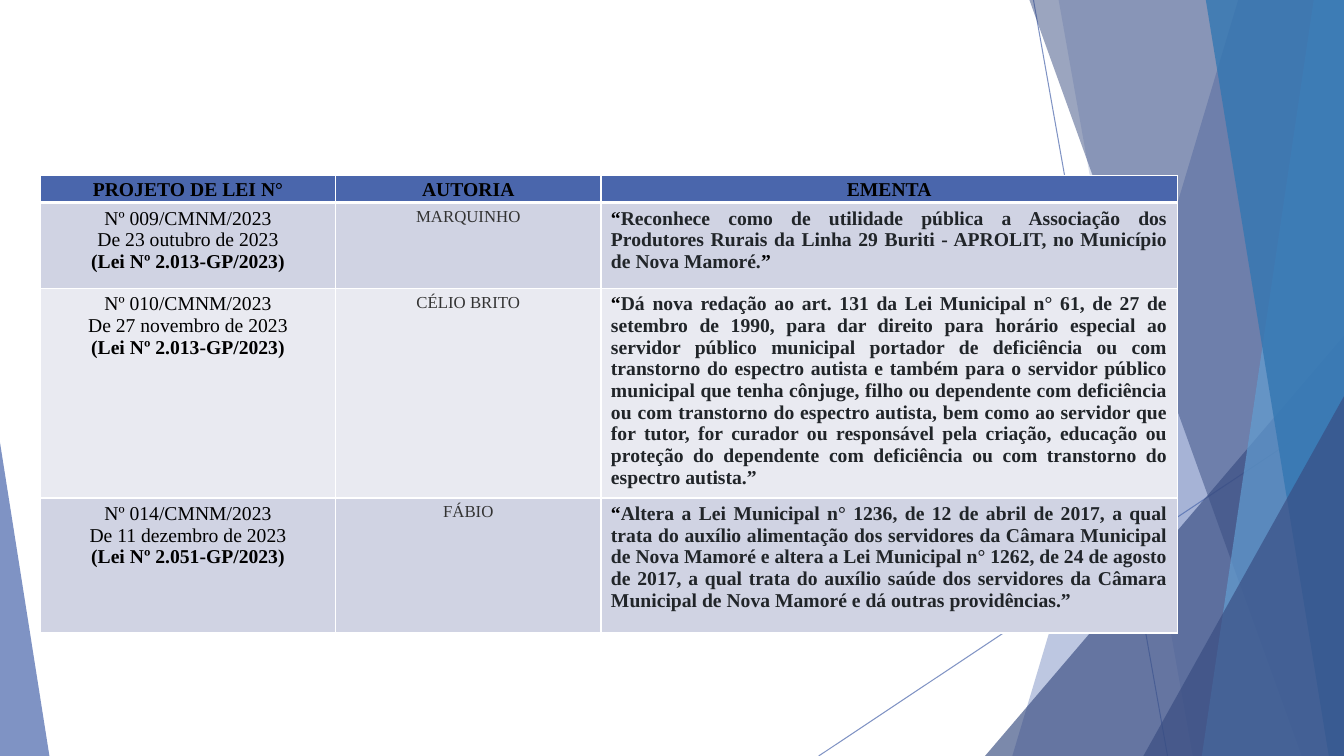
import pptx
import pptx.util
import pptx.dml.color
import pptx.enum.shapes
import pptx.enum.text
import pptx.oxml.ns
from lxml import etree

W, H = 1333, 750
EMU_PER_PX = 9144
BLUE, NAVY, SKY, OCEAN = "4A66AC", "384C81", "629DD1", "3477B2"
WHITE, BLACK, GREY, INK = "FFFFFF", "000000", "333333", "212529"
BANDS = ["D0D3E3", "E9EAF1"]
CENTER = pptx.enum.text.PP_ALIGN.CENTER
JUSTIFY = pptx.enum.text.PP_ALIGN.JUSTIFY


def px(n):
    return pptx.util.Emu(n * EMU_PER_PX)


def rgb(color):
    return pptx.dml.color.RGBColor.from_string(color)


def sub(parent, tag, **attrs):
    return etree.SubElement(parent, pptx.oxml.ns.qn(tag), attrs)


def set_alpha(element, percent):
    """Make every colour inside the element partly transparent."""
    for clr in element.iter(pptx.oxml.ns.qn("a:srgbClr")):
        sub(clr, "a:alpha", val=str(percent * 1000))


class Deck:
    """Holds the style and the current slide."""

    font = "Times New Roman"
    size = 14

    def __init__(self):
        self.prs = pptx.Presentation()
        self.prs.slide_width, self.prs.slide_height = px(W), px(H)
        self.slide = self.prs.slides.add_slide(self.prs.slide_layouts[6])
        self.shapes = self.slide.shapes

    def line(self, x1, y1, x2, y2):
        kind = pptx.enum.shapes.MSO_CONNECTOR.STRAIGHT
        sp = self.shapes.add_connector(kind, px(x1), px(y1), px(x2), px(y2))
        sp.line.width = pptx.util.Pt(0.75)
        sp.line.color.rgb = rgb(BLUE)
        set_alpha(sp._element.spPr, 70)
        sub(sp._element.spPr, "a:effectLst")

    def paint(self, sp, color, alpha):
        sp.shadow.inherit = False
        sp.line.fill.background()
        sp.fill.solid()
        sp.fill.fore_color.rgb = rgb(color)
        set_alpha(sp._element.spPr, alpha)

    def shard(self, top_x, bottom_x, color, alpha):
        """Full-height panel from a slanted left edge to the slide's right edge."""
        builder = self.shapes.build_freeform(px(top_x), 0)
        corners = [(W, 0), (W, H), (bottom_x, H)]
        builder.add_line_segments([(px(x), px(y)) for x, y in corners])
        self.paint(builder.convert_to_shape(), color, alpha)

    def triangle(self, x, y, w, apex, color, alpha):
        """Triangle standing on the bottom edge; apex is 0 (left) to 1 (right)."""
        kind = pptx.enum.shapes.MSO_SHAPE.ISOSCELES_TRIANGLE
        sp = self.shapes.add_shape(kind, px(x), px(y), px(w), px(H - y))
        sp.adjustments[0] = apex
        self.paint(sp, color, alpha)

    def borders(self, cell, **widths):
        tcPr = cell._tc.get_or_add_tcPr()
        for side in "LRTB":
            width = pptx.util.Pt(widths.get(side, 1))
            ln = sub(tcPr, "a:ln" + side, w=str(int(width)))
            sub(sub(ln, "a:solidFill"), "a:srgbClr", val=WHITE)

    def add_text(self, cell, paragraphs, **layout):
        """Each paragraph is a list of (text, font values) runs."""
        tf = cell.text_frame
        for i, runs in enumerate(paragraphs):
            p = tf.add_paragraph() if i else tf.paragraphs[0]
            for name, value in layout.items():
                setattr(p, name, value)
            for text, values in runs:
                r = p.add_run()
                r.text = text
                font = {"name": self.font, "size": self.size, "bold": True,
                        "color": BLACK} | values
                r.font.color.rgb = rgb(font.pop("color"))
                font["size"] = pptx.util.Pt(font["size"])
                for name, value in font.items():
                    setattr(r.font, name, value)

    def fill_cell(self, cell, color):
        cell.fill.solid()
        cell.fill.fore_color.rgb = rgb(color)

    def table(self, x, y, widths, heights, header, laws):
        tb = self.shapes.add_table(len(heights), len(widths), px(x), px(y),
                                   px(sum(widths)), px(sum(heights))).table
        for col, width in zip(tb.columns, widths):
            col.width = px(width)
        for row, height in zip(tb.rows, heights):
            row.height = px(height)
        margins = {"margin_left": px(7), "margin_right": px(7),
                   "margin_top": 0, "margin_bottom": 0}
        for cell, title in zip(tb.rows[0].cells, header):
            for name, value in margins.items():
                setattr(cell, name, value)
            self.borders(cell, B=3)
            self.fill_cell(cell, BLUE)
            self.add_text(cell, [[(title, {})]], alignment=CENTER, line_spacing=1.15)
        for i, (number, date, law, author, summary, end) in enumerate(laws):
            project, name, text = cells = list(tb.rows[i + 1].cells)
            for cell in cells:
                self.borders(cell, T=1 if i else 3)
                self.fill_cell(cell, BANDS[i % 2])
            plain = {"bold": False}
            self.add_text(project, [[(number, plain)], [(date, plain)], [(law, {})]],
                          alignment=CENTER)
            self.add_text(name, [[(author, plain | {"size": 12, "color": GREY})]],
                          alignment=CENTER)
            self.add_text(text, [[("“", {}), (summary, {"color": INK}),
                                  ("”", {"color": end})]], alignment=JUSTIFY)


HEADER = ["PROJETO DE LEI N°", "AUTORIA", "EMENTA"]
LAWS = [
    ("Nº 009/CMNM/2023", "De 23 outubro de 2023", "(Lei Nº 2.013-GP/2023)",
     "MARQUINHO",
     "Reconhece como de utilidade pública a Associação dos Produtores Rurais "
     "da Linha 29 Buriti - APROLIT, no Município de Nova Mamoré.", BLACK),
    ("Nº 010/CMNM/2023", "De 27 novembro de 2023", "(Lei Nº 2.013-GP/2023)",
     "CÉLIO BRITO",
     "Dá nova redação ao art. 131 da Lei Municipal n° 61, de 27 de setembro de "
     "1990, para dar direito para horário especial ao servidor público municipal "
     "portador de deficiência ou com transtorno do espectro autista e também para "
     "o servidor público municipal que tenha cônjuge, filho ou dependente com "
     "deficiência ou com transtorno do espectro autista, bem como ao servidor que "
     "for tutor, for curador ou responsável pela criação, educação ou proteção do "
     "dependente com deficiência ou com transtorno do espectro autista.", INK),
    ("Nº 014/CMNM/2023", "De 11 dezembro de 2023", "(Lei Nº 2.051-GP/2023)",
     "FÁBIO",
     "Altera a Lei Municipal n° 1236, de 12 de abril de 2017, a qual trata do "
     "auxílio alimentação dos servidores da Câmara Municipal de Nova Mamoré e "
     "altera a Lei Municipal n° 1262, de 24 de agosto de 2017, a qual trata do "
     "auxílio saúde dos servidores da Câmara Municipal de Nova Mamoré e dá outras "
     "providências.", INK),
]


def main():
    deck = Deck()
    deck.line(1025, 0, 1158, H)
    deck.line(W, 403, 812, H)
    deck.shard(1228, 1004, BLUE, 36)
    deck.shard(1050, 1183, BLUE, 20)
    deck.triangle(977, 333, 356, 1, NAVY, 66)
    deck.shard(1021, 1291, NAVY, 50)
    deck.shard(1303, 1192, SKY, 70)
    deck.shard(1196, 1318, OCEAN, 80)
    deck.triangle(1134, 393, 199, 1, NAVY, 66)
    deck.triangle(0, 439, 49, 0, BLUE, 70)
    deck.table(40, 174, [293, 263, 572], [27, 85, 208, 134], HEADER, LAWS)
    deck.prs.save("out.pptx")


if __name__ == "__main__":
    main()
